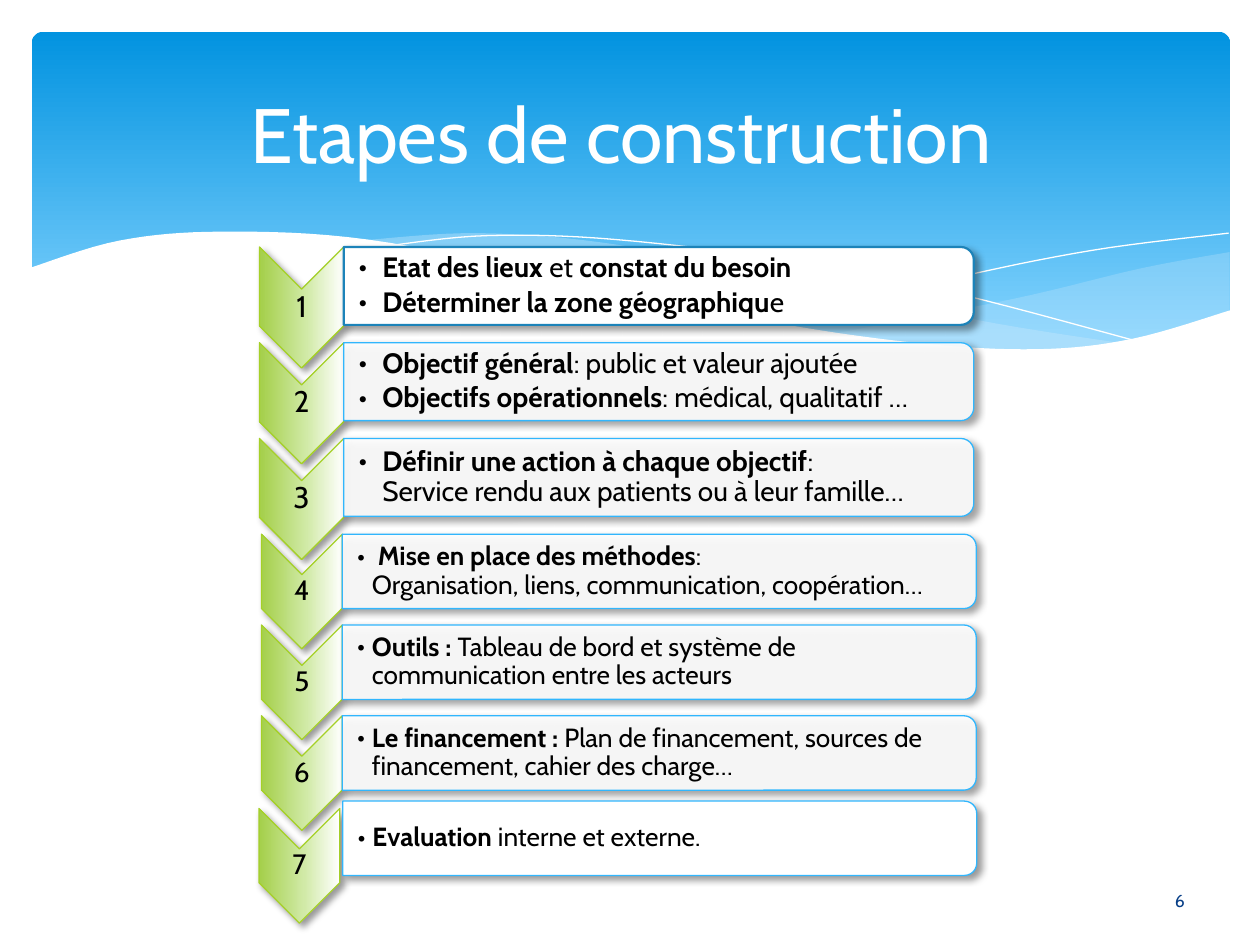
import copy

import pptx
import pptx.dml.color
import pptx.enum.shapes
import pptx.enum.text
import pptx.oxml.ns
import pptx.util
from lxml import etree

Cm, Pt = pptx.util.Cm, pptx.util.Pt
RGB = pptx.dml.color.RGBColor.from_string
qn = pptx.oxml.ns.qn
Preset = pptx.enum.shapes.MSO_SHAPE
Align = pptx.enum.text.PP_ALIGN
MIDDLE = pptx.enum.text.MSO_ANCHOR.MIDDLE

THEME = {
    "font": "Cabin", "title_size": 44, "page_size": 10,
    "white": "FFFFFF", "black": "000000", "page": "073E87", "wave": "C6E7FC",
    "sky": [(0, "0293E0"), (90, "83D3FE")],
    "chevron": [(0, "FFFFFF"), (44, "D1EAA7"), (100, "A4CF4A")],
    "chevron_line": "A5D028", "panel_line": "31B6FD", "first_line": "1C83B9",
}


def paint(shape, fill=None, alpha=100, line=None, width=0.75, shadow=False):
    """Fill with a colour, a list of gradient stops or nothing; set line and shadow."""
    properties = shape.element.spPr
    if isinstance(fill, list):
        shape.fill.gradient()
        shape.fill.gradient_angle = 270
        stops = properties.find(qn("a:gradFill")).find(qn("a:gsLst"))
        stops.clear()
        for position, color in fill:
            stop = etree.SubElement(stops, qn("a:gs"), pos=str(position * 1000))
            etree.SubElement(stop, qn("a:srgbClr"), val=color)
    elif fill:
        shape.fill.solid()
        shape.fill.fore_color.rgb = RGB(fill)
        if alpha < 100:
            color = properties.find(qn("a:solidFill"))[0]
            etree.SubElement(color, qn("a:alpha"), val=str(alpha * 1000))
    else:
        shape.fill.background()
    if line:
        shape.line.color.rgb = RGB(line)
        shape.line.width = Pt(width)
    else:
        shape.line.fill.background()
    shape.shadow.inherit = False
    if shadow:
        outer = etree.SubElement(
            properties.find(qn("a:effectLst")), qn("a:outerShdw"), blurRad=str(Pt(4)),
            dist=str(Pt(3)), dir="2700000", algn="tl", rotWithShape="0")
        color = etree.SubElement(outer, qn("a:srgbClr"), val=THEME["black"])
        etree.SubElement(color, qn("a:alpha"), val="40000")


def write(shape, paragraphs, size, color, align=Align.CENTER, indent=None, inset=0.03, spacing=1.0):
    """Write paragraphs of runs; in bulleted ones bold and regular runs alternate."""
    frame = shape.text_frame
    frame_format = {
        "word_wrap": True, "vertical_anchor": MIDDLE, "margin_left": Cm(inset),
        "margin_right": Cm(0.03), "margin_top": Cm(0.03), "margin_bottom": Cm(0.03)}
    for name, value in frame_format.items():
        setattr(frame, name, value)
    paragraph_format = {"alignment": align, "line_spacing": spacing, "space_before": Pt(0),
                        "space_after": Pt(0.15 * size if indent else 0)}
    font_format = {"name": THEME["font"], "size": Pt(size)}
    for index, runs in enumerate(paragraphs):
        paragraph = frame.add_paragraph() if index else frame.paragraphs[0]
        for name, value in paragraph_format.items():
            setattr(paragraph, name, value)
        if indent:
            properties = paragraph._p.get_or_add_pPr()
            properties.set("marL", str(Cm(indent)))
            properties.set("indent", str(-Cm(indent)))
            etree.SubElement(properties, qn("a:buFont"), typeface=THEME["font"])
            etree.SubElement(properties, qn("a:buChar"), char="•")
        for position, text in enumerate(runs):
            for line_index, line_text in enumerate(text.split("\n")):
                if line_index:
                    # A line break takes the type size of the run before it
                    paragraph.add_line_break()
                    paragraph._p[-1].append(copy.deepcopy(run._r.rPr))
                run = paragraph.add_run()
                run.text = line_text
                for name, value in font_format.items():
                    setattr(run.font, name, value)
                run.font.bold = bool(indent) and position % 2 == 0
                run.font.color.rgb = RGB(color)


presentation = pptx.Presentation()
presentation.slide_width, presentation.slide_height = Cm(25.4), Cm(19.05)
slide = presentation.slides.add_slide(presentation.slide_layouts[5])
shapes = slide.shapes

# Sky band
sky = shapes.add_shape(Preset.ROUNDED_RECTANGLE, Cm(0.64), Cm(0.64), Cm(24.16), Cm(6.86))
sky.adjustments[0] = 0.034
paint(sky, THEME["sky"])

# Wave edges: the few points, in centimetres, that each smooth edge passes through
right_top = [(24.79, 5.08), (23, 5.41), (20.45, 6.02), (16.79, 6.73)]
right_bottom = [(16.79, 6.73), (18.92, 6.99), (20.68, 7.06), (22.58, 6.91), (24.79, 6.27)]
middle_top = [(22.68, 6.93), (19.69, 6.45), (15.98, 5.64), (12.42, 4.93), (9.65, 4.7), (7.26, 4.85)]
middle_bottom = [(7.26, 4.85), (10.26, 5.36), (14.38, 6.3), (17.65, 6.86), (20.5, 7.06), (22.68, 6.93)]
long_line = [(7.85, 4.95), (9.83, 4.75), (12.42, 4.83), (16.15, 5.28), (19.3, 5.92), (23.04, 6.91)]
short_line = [(15.57, 6.53), (19, 5.66), (22, 5.05), (24.77, 4.7)]
front_top = [(0.58, 5.41), (2.41, 4.85), (4.5, 4.67), (7.42, 4.83), (11.35, 5.59), (15.32, 6.45),
             (18.44, 6.91), (20.9, 7.04), (22.83, 6.83), (24.82, 6.25)]
front_bottom = [(24.82, 8.36), (0.58, 8.36)]

hairline = {"line": THEME["white"], "width": 0}
waves = [
    ([right_top, right_bottom], {"fill": THEME["wave"], "alpha": 29}),
    ([middle_top, middle_bottom], {"fill": THEME["wave"], "alpha": 40}),
    ([long_line], hairline),
    ([short_line], hairline),
    ([front_top, front_bottom], {"fill": THEME["white"]}),
]
CURVE_STEPS = 8
UNITS_PER_CM = 1000
for edges, look in waves:
    outline_points = []
    for edge in edges:
        # Catmull-Rom spline: the end points are doubled to give the end slopes
        guides = [edge[0], *edge, edge[-1]]
        for before, start, end, after in zip(guides, guides[1:], guides[2:], guides[3:]):
            for step in range(CURVE_STEPS + 1):
                t = step / CURVE_STEPS
                outline_points.append(tuple(
                    UNITS_PER_CM * (b + (c - a) / 2 * t + (a - 2.5 * b + 2 * c - d / 2) * t ** 2
                                    + (1.5 * (b - c) + (d - a) / 2) * t ** 3)
                    for a, b, c, d in zip(before, start, end, after)))
    builder = shapes.build_freeform(*outline_points[0], scale=Cm(1) / UNITS_PER_CM)
    builder.add_line_segments(outline_points[1:], close="fill" in look)
    paint(builder.convert_to_shape(), **look)

# Title, brought in front of the sky
title = shapes.title
title_format = {"left": Cm(1.27), "top": Cm(0.94), "width": Cm(22.86), "height": Cm(3.48)}
for name, value in title_format.items():
    setattr(title, name, value)
write(title, [["Etapes de construction "]], THEME["title_size"], THEME["white"])
title.element.getparent().append(title.element)

# Steps: a chevron with its number, and a panel that starts at the chevron's right side
large = {"chevron_size": (1.7, 2.44), "panel_size": (12.7, 1.57), "pitch": 1.93,
         "number_size": 17, "text_size": 16, "indent": 0.48}
small = {"chevron_size": (1.63, 2.31), "panel_size": (12.78, 1.5), "pitch": 1.83,
         "number_size": 16, "text_size": 15, "indent": 0.3}
blocks = [
    {**large, "left": 5.23, "top": 4.98, "panel_shift": (0, 0), "steps": [
        [["Etat des lieux ", "et ", "constat du besoin"],
         ["Déterminer la zone géographiqu", "e"]],
        [["Objectif général", ": public et valeur ajoutée"],
         ["Objectifs opérationnels", ": médical, qualitatif …"]],
        [["Définir une action à chaque objectif",
          ":\nService rendu aux patients ou à leur famille…"]]]},
    {**small, "left": 5.27, "top": 10.77, "panel_shift": (0, 0), "steps": [
        [[" Mise en place des méthodes",
          ":\nOrganisation, liens, communication, coopération…"]],
        [["Outils : ", "Tableau de bord et système de communication entre les acteurs"]],
        [["Le financement : ",
          "Plan de financement, sources de financement, cahier des charge…"]]]},
    {**small, "left": 5.22, "top": 16.3, "panel_shift": (0.06, -0.15), "steps": [
        [["Evaluation", " interne et externe."]]]},
]
chevron_look = {"fill": THEME["chevron"], "line": THEME["chevron_line"]}
panel_look = {"fill": THEME["white"], "alpha": 90, "line": THEME["panel_line"]}
special_panels = {1: {"alpha": 100, "line": THEME["first_line"], "width": 1.25}, 7: {"alpha": 100}}

number = 0
for block in blocks:
    for row, step_text in enumerate(block["steps"]):
        number += 1
        top = block["top"] + row * block["pitch"]
        shift_x, shift_y = block["panel_shift"]
        panel_left = block["left"] + block["chevron_size"][0] + shift_x
        number_text = {"paragraphs": [[str(number)]], "size": block["number_size"]}
        panel_text = {"paragraphs": step_text, "size": block["text_size"], "align": Align.LEFT,
                      "indent": block["indent"], "inset": 0.3}
        parts = [
            (Preset.CHEVRON, block["left"], top, block["chevron_size"], chevron_look, number_text),
            (Preset.ROUND_2_SAME_RECTANGLE, panel_left, top + shift_y, block["panel_size"],
             {**panel_look, **special_panels.get(number, {})}, panel_text),
        ]
        for preset, x, y, (width, height), look, content in parts:
            # The shape is turned a quarter around its centre, so its sides are swapped
            turn = (width - height) / 2
            shape = shapes.add_shape(preset, Cm(x + turn), Cm(y - turn), Cm(height), Cm(width))
            shape.rotation = 90
            paint(shape, shadow=True, **look)
            label = shapes.add_textbox(Cm(x), Cm(y), Cm(width), Cm(height))
            write(label, color=THEME["black"], spacing=0.9, **content)

# Page number
page = shapes.add_textbox(Cm(22.17), Cm(17.65), Cm(3.23), Cm(1.02))
write(page, [["6"]], THEME["page_size"], THEME["page"])

presentation.save("out.pptx")
